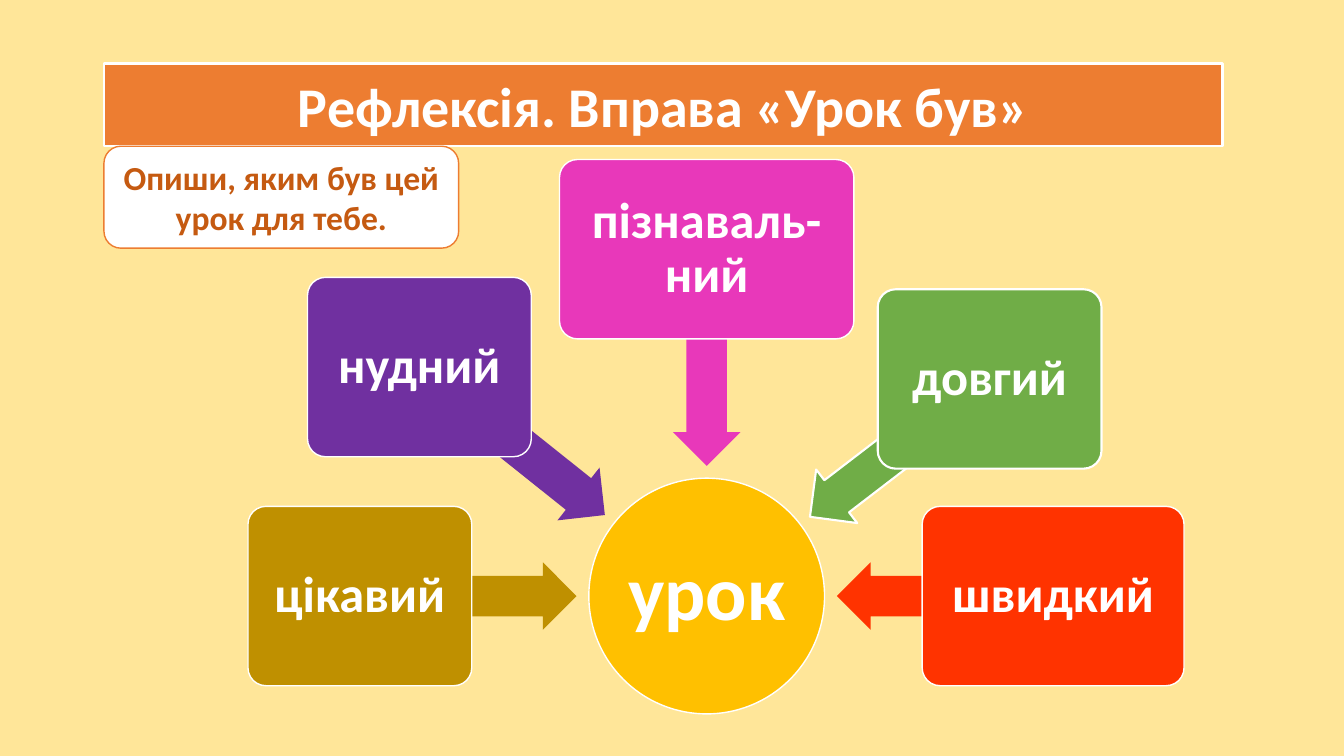
"""Build the lesson reflection slide: five adjectives pointing at one hub."""
import dataclasses
import math

import pptx
import pptx.dml.color
import pptx.enum.shapes
import pptx.enum.text
import pptx.util

Cm = pptx.util.Cm
Shape = pptx.enum.shapes.MSO_SHAPE


@dataclasses.dataclass(frozen=True)
class Theme:
    font: str = "Calibri"
    background: str = "FFE699"
    white: str = "FFFFFF"
    accent: str = "ED7D31"
    hint_text: str = "C55A11"
    hub: str = "FFC000"
    olive: str = "BF9000"
    purple: str = "7030A0"
    pink: str = "E838BA"
    green: str = "70AD47"
    red: str = "FF3300"
    title_size: int = 40
    hint_size: int = 24
    word_size: int = 36
    hub_size: int = 55


class SlideBuilder:
    def __init__(self, slide, theme):
        self.slide = slide
        self.theme = theme
        slide.background.fill.solid()
        slide.background.fill.fore_color.rgb = self.color(theme.background)

    def color(self, value):
        return pptx.dml.color.RGBColor.from_string(value)

    def paint(self, shape, fill, line=None, width=1):
        shape.fill.solid()
        shape.fill.fore_color.rgb = self.color(fill)
        if line:
            shape.line.color.rgb = self.color(line)
            shape.line.width = pptx.util.Pt(width)
        else:
            shape.line.fill.background()

    def label(self, shape, text, size, color, spacing=1.0, inset=0.25):
        frame = shape.text_frame
        frame.text = text
        frame.word_wrap = True
        frame.auto_size = pptx.enum.text.MSO_AUTO_SIZE.NONE
        frame.vertical_anchor = pptx.enum.text.MSO_ANCHOR.MIDDLE
        frame.margin_left = frame.margin_right = Cm(inset)
        frame.margin_top = frame.margin_bottom = Cm(min(inset, 0.18))
        para = frame.paragraphs[0]
        para.alignment = pptx.enum.text.PP_ALIGN.CENTER
        para.line_spacing = spacing
        font = para.runs[0].font
        font.name = self.theme.font
        font.size = pptx.util.Pt(size)
        font.bold = True
        font.color.rgb = self.color(color)

    def centred(self, kind, centre, width, height):
        left, top = centre[0] - width / 2, centre[1] - height / 2
        shape = self.slide.shapes.add_shape(kind, Cm(left), Cm(top), Cm(width), Cm(height))
        shape.shadow.inherit = False
        return shape

    def title(self, text, left, top, width, height):
        title = self.slide.shapes.title
        title.left, title.top, title.width, title.height = map(Cm, (left, top, width, height))
        self.paint(title, self.theme.accent, self.theme.white, 1.5)
        self.label(title, text, self.theme.title_size, self.theme.white)

    def hint(self, text, centre, width, height):
        box = self.centred(Shape.ROUNDED_RECTANGLE, centre, width, height)
        self.paint(box, self.theme.white, self.theme.accent)
        self.label(box, text, self.theme.hint_size, self.theme.hint_text)

    def hub(self, text, centre, diameter):
        circle = self.centred(Shape.OVAL, centre, diameter, diameter)
        self.paint(circle, self.theme.hub, self.theme.white)
        self.label(circle, text, self.theme.hub_size, self.theme.white, 0.9, 0.1)

    def arrow(self, start, target, gap, fill, line, line_width):
        across, down = target[0] - start[0], target[1] - start[1]
        distance = math.hypot(across, down)
        length = distance - gap
        share = length / distance / 2
        middle = (start[0] + across * share, start[1] + down * share)
        arrow = self.centred(Shape.LEFT_ARROW, middle, length, 1.7)
        arrow.adjustments[0] = 0.6
        arrow.adjustments[1] = 0.5
        arrow.rotation = round(math.degrees(math.atan2(down, across)) + 180, 1) % 360
        self.paint(arrow, fill, line, line_width)

    def word(self, text, centre, width, fill, line_width):
        box = self.centred(Shape.ROUNDED_RECTANGLE, centre, width, 4.52)
        box.adjustments[0] = 0.1
        self.paint(box, fill, self.theme.white, line_width)
        self.label(box, text, self.theme.word_size, self.theme.white, 0.9, 0.18)


def main():
    theme = Theme()
    deck = pptx.Presentation()
    deck.slide_width, deck.slide_height = Cm(33.87), Cm(19.05)
    page = SlideBuilder(deck.slides.add_slide(deck.slide_layouts[5]), theme)

    page.title("Рефлексія. Вправа «Урок був»", 2.62, 1.6, 28.19, 2.08)
    hub_centre = (17.81, 15.02)
    page.hub("урок", hub_centre, 5.94)
    words = [
        ("цікавий", (9.07, 15.02), 5.64, theme.olive, None, 1),
        ("нудний", (10.57, 9.25), 5.64, theme.purple, None, 1),
        ("пізнаваль-ний", (17.81, 6.28), 7.42, theme.pink, None, 1),
        ("довгий", (24.94, 9.55), 5.64, theme.green, theme.white, 1.5),
        ("швидкий", (26.54, 15.02), 6.6, theme.red, None, 1),
    ]
    for text, centre, width, fill, arrow_line, line_width in words:
        page.arrow(centre, hub_centre, 3.28, fill, arrow_line, line_width)
        page.word(text, centre, width, fill, line_width)
    page.hint("Опиши, яким був цей урок для тебе.", (7.09, 4.97), 8.94, 2.57)
    deck.save("out.pptx")


if __name__ == "__main__":
    main()
